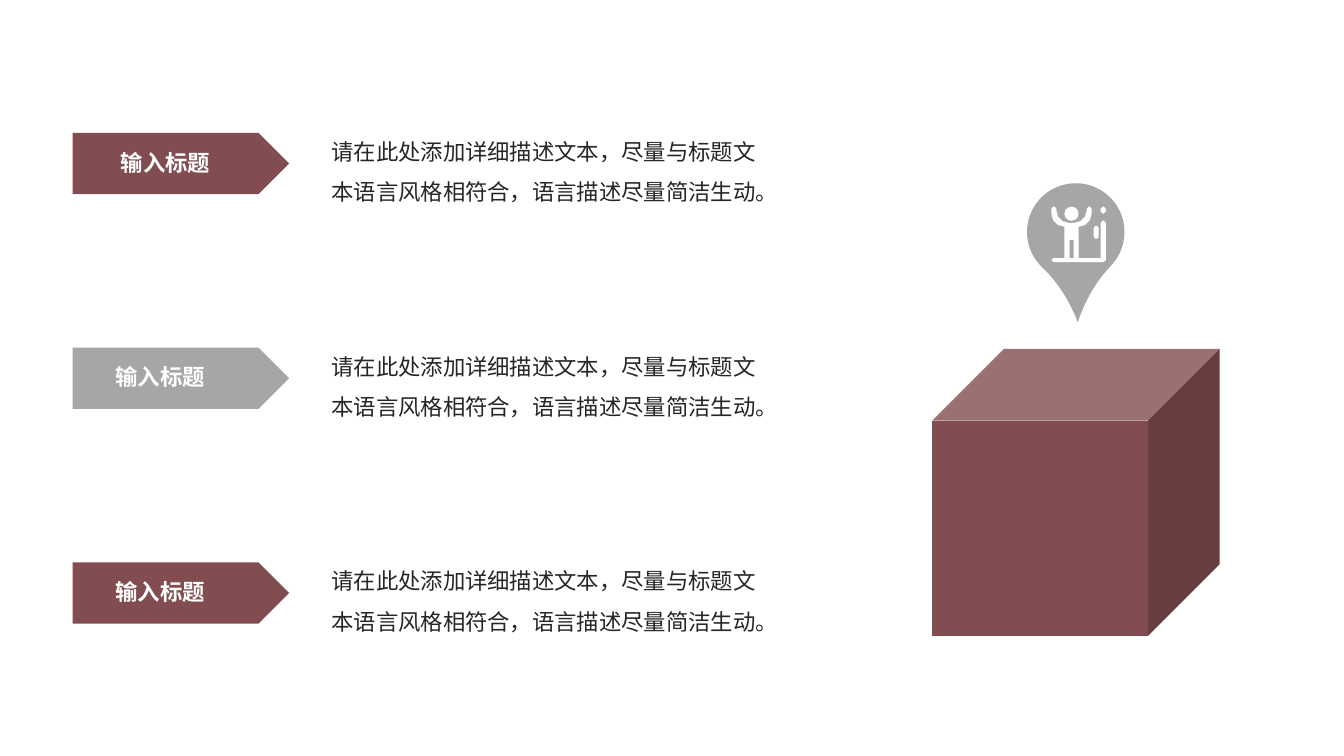
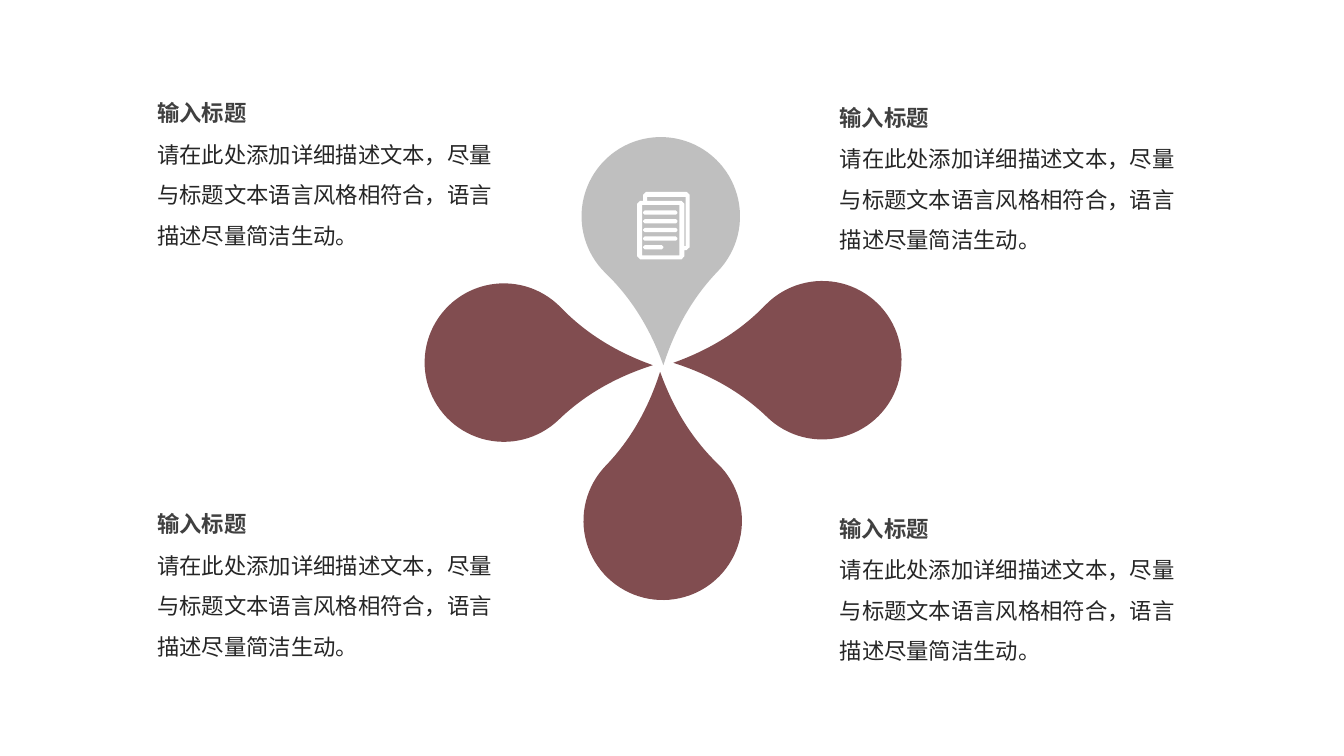
from lxml import etree
from pptx import Presentation
from pptx.dml.color import RGBColor
from pptx.enum import shapes, text
from pptx.oxml import ns
from pptx.util import Pt

WINE = RGBColor(0x81, 0x4D, 0x50)
GRAY = RGBColor(0xA6, 0xA6, 0xA6)
PALE = RGBColor(0xBF, 0xBF, 0xBF)
WHITE = RGBColor(0xFF, 0xFF, 0xFF)
INK = RGBColor(0x26, 0x26, 0x26)
HEAD = RGBColor(0x40, 0x40, 0x40)
FACE = "Noto Sans CJK SC"
KIND = shapes.MSO_SHAPE

TITLE = "输入标题"
BODY = "请在此处添加详细描述文本，尽量与标题文本语言风格相符合，语言描述尽量简洁生动。"

ROWS = [(WINE, 79.3), (GRAY, 75.4), (WINE, 75.4)]
ROW_TOP, ROW_STEP = 94.9, 153.4
NOTES = [(105.2, 67.6), (592.7, 70.6), (105.2, 361.2), (592.7, 364.2)]
DROPS = [
    (415.4, 97.9, 134, PALE),
    (530.8, 200.7, 224, WINE),
    (416.8, 315.4, 314, WINE),
    (303.3, 202.4, 46, WINE),
]


def box(l, t, r, b, bend=0):
    return [(l, t, bend), (r, t, bend), (r, b, bend), (l, b, bend)]


UNIT = 0.72
PERSON = [
    [(0, 0, 2), (5, 0, 2), (5, 16, 12), (35, 16, 12), (35, 0, 2), (40, 0, 2),
     (40, 20, 13), (27, 20, 0), (27, 51, 0), (49, 51, 0), (49, 14, 2),
     (54, 14, 2), (54, 55, 2), (0, 55, 2), (0, 51, 2), (13, 51, 0),
     (13, 20, 0), (0, 20, 13)],
    box(18, 33, 22, 51),
    box(13, 0, 27, 14, 6.9),
    box(42, 19, 47, 32, 2),
    box(49, 0, 54, 7, 2),
]
PAGES = [
    [(6, 0, 3), (52, 0, 3), (52, 58, 3), (47, 58, 0), (47, 67, 3),
     (0, 67, 3), (0, 9, 3), (6, 9, 0)],
    box(5, 13, 42, 63),
    [(10, 5, 0), (48, 5, 0), (48, 54, 0), (47, 54, 0), (47, 9, 3), (10, 9, 0)],
]
PAGES += [box(6, 18.6 + 8.6 * i, 40 if i < 4 else 26, 22.8 + 8.6 * i, 1.5)
          for i in range(5)]


def paint(shape, color):
    shape.shadow.inherit = False
    shape.fill.solid()
    shape.fill.fore_color.rgb = color
    shape.line.fill.background()
    return shape


def add(slide, kind, l, t, w, h, color):
    return paint(slide.shapes.add_shape(kind, Pt(l), Pt(t), Pt(w), Pt(h)), color)


def label(slide, l, t, w, h, words, color, bold=False, space=1.0):
    frame = slide.shapes.add_textbox(Pt(l), Pt(t), Pt(w), Pt(h)).text_frame
    frame.word_wrap = True
    frame.auto_size = text.MSO_AUTO_SIZE.SHAPE_TO_FIT_TEXT
    par = frame.paragraphs[0]
    par.text = words
    par.line_spacing = space
    font = par.font
    font.name, font.size, font.bold = FACE, Pt(16), bold
    font.color.rgb = color
    props = par._p.pPr.find(ns.qn("a:defRPr"))
    east = etree.Element(ns.qn("a:ea"), typeface=FACE)
    props.find(ns.qn("a:latin")).addnext(east)


def head(slide, l, t, color):
    label(slide, l, t, 81.4, 26.6, TITLE, color, bold=True)


def body(slide, l, t, w, h):
    label(slide, l, t, w, h, BODY, INK, space=1.5)


def drop(slide, l, t, size, turn, tip, color):
    shape = add(slide, KIND.TEAR, l, t, size, size, color)
    shape.adjustments[0] = tip
    shape.rotation = turn


def toward(a, b, dist):
    dx, dy = b[0] - a[0], b[1] - a[1]
    part = dist / (dx * dx + dy * dy) ** 0.5
    return a[0] + dx * part, a[1] + dy * part


def soften(points):
    for i, (x, y, bend) in enumerate(points):
        if not bend:
            yield x, y
            continue
        at = (x, y)
        prev, after = points[i - 1], points[(i + 1) % len(points)]
        ends = [toward(at, prev, bend), toward(at, prev, bend * 0.45),
                toward(at, after, bend * 0.45), toward(at, after, bend)]
        count = 3 if bend > 3 else 1
        for step in range(count + 1):
            s = step / count
            mix = ((1 - s) ** 3, 3 * s * (1 - s) ** 2, 3 * s * s * (1 - s), s ** 3)
            yield tuple(sum(m * e[k] for m, e in zip(mix, ends)) for k in (0, 1))


def icon(slide, l, t, loops):
    pen = None
    for loop in loops:
        spots = [(Pt(l + x * UNIT), Pt(t + y * UNIT)) for x, y in soften(loop)]
        if pen is None:
            pen = slide.shapes.build_freeform(*spots[0])
        else:
            pen.move_to(*spots[0])
        pen.add_line_segments(spots[1:], close=True)
    paint(pen.convert_to_shape(), WHITE)


def steps(slide):
    tops = [ROW_TOP + i * ROW_STEP for i in range(len(ROWS))]
    for top, (color, _) in zip(tops, ROWS):
        add(slide, KIND.PENTAGON, 52, top, 154.6, 43.8, color)
    for top, (_, left) in zip(tops, ROWS):
        head(slide, left, top + 7.9, WHITE)
    for top in tops:
        body(slide, 229.7, top - 9.4, 328.3, 62)
    add(slide, KIND.CUBE, 666, 249.1, 205.2, 205.2, WINE)
    drop(slide, 733.6, 130.9, 69.6, 133.7, 1.31, GRAY)
    icon(slide, 751, 147.6, PERSON)


def petals(slide):
    for l, t, turn, color in DROPS:
        drop(slide, l, t, 113.2, turn, 1.33, color)
    for l, t in NOTES:
        body(slide, l, t + 20.2, 262, 91.4)
        head(slide, l, t, HEAD)
    icon(slide, 455.1, 137, PAGES)


def main():
    deck = Presentation()
    deck.slide_width, deck.slide_height = Pt(960), Pt(540)
    for fill in (steps, petals):
        fill(deck.slides.add_slide(deck.slide_layouts[6]))
    deck.save("out.pptx")


if __name__ == "__main__":
    main()
